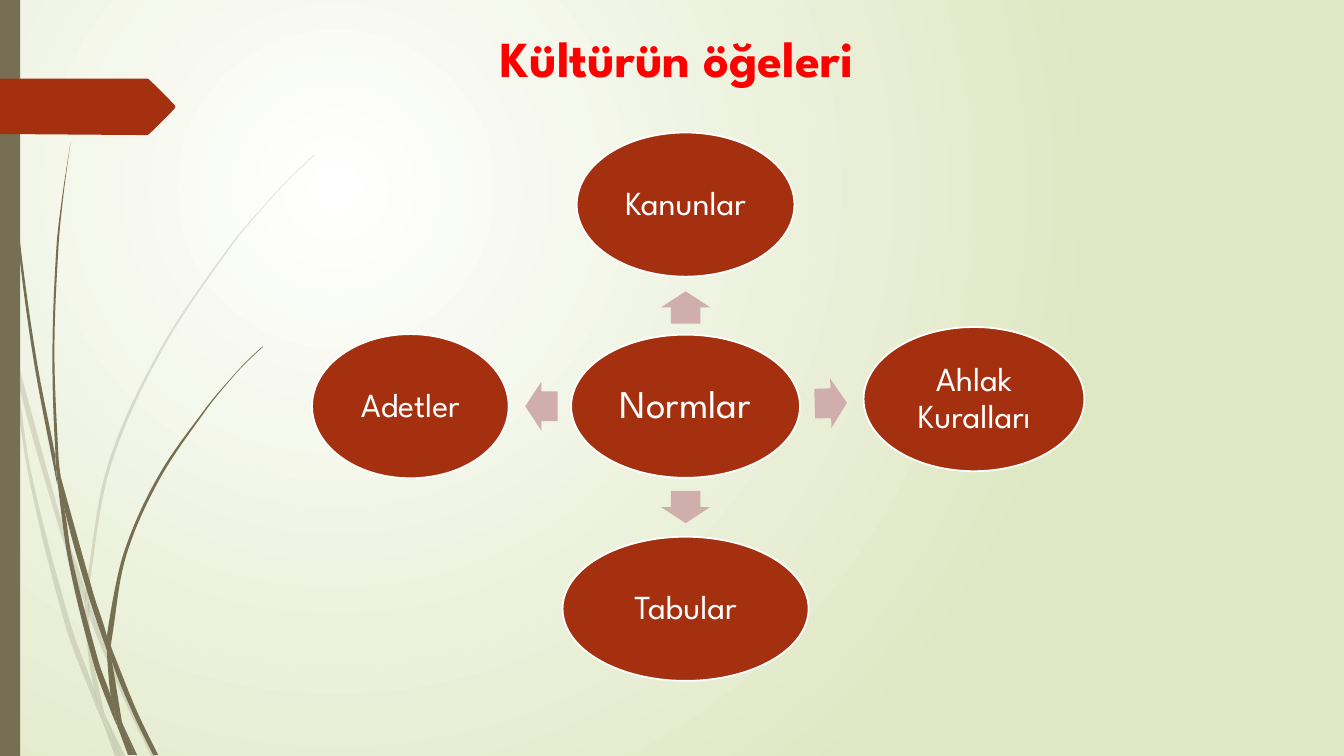
from dataclasses import dataclass
from math import dist

from lxml.etree import SubElement
from pptx import Presentation
from pptx.dml.color import RGBColor
from pptx.enum.shapes import MSO_SHAPE
from pptx.enum.text import MSO_ANCHOR, PP_ALIGN
from pptx.oxml.ns import qn
from pptx.util import Inches, Pt


@dataclass(frozen=True)
class Theme:
    """Colours, typeface and type sizes of the slide."""
    font: str = "League Spartan"
    title_size: int = 36
    hub_size: int = 28
    node_size: int = 24
    title: str = "FF0000"
    white: str = "FFFFFF"
    background: str = "DFE8C4"
    rust: str = "A53010"
    pink: str = "CFAEAB"
    olive: str = "766F54"


THEME = Theme()

FAINT_GRASS = [
    [(0.11, 3.5), (0.09, 3.22), (0, 2.82), (0, 2.99), (0.1, 3.44)],
    [(0.58, 5.22), (0.84, 5.99), (0.85, 5.86), (0.62, 5.2), (0.14, 3.45), (0.17, 3.76)],
    [(0.92, 6.07), (0.88, 5.96), (0.88, 6.1), (1.23, 6.94), (1.5, 7.5), (1.55, 7.5), (1.27, 6.92)],
    [(1.19, 7.5), (1.24, 7.5), (1.05, 7.11)],
    [(0.93, 6.83), (0.7, 6.19), (0.31, 4.69), (0.17, 3.76), (0.11, 3.5), (0.28, 4.7),
     (0.65, 6.21), (0.92, 6.93), (1.01, 7.14), (0.99, 7.07)],
    [(0.84, 5.99), (0.87, 6.46), (0.93, 6.83), (0.96, 6.92), (1.05, 7.11), (1.03, 7.06),
     (0.91, 6.46), (0.88, 6.1), (0.88, 6.08)],
    [(0.88, 5.84), (1.1, 4.62), (1.6, 3.49), (2.29, 2.45), (2.68, 1.98), (2.9, 1.75), (3.12, 1.54),
     (3.12, 1.53), (2.89, 1.75), (2.68, 1.97), (2.28, 2.44), (1.58, 3.48), (1.07, 4.61),
     (0.85, 5.84), (0.85, 5.86), (0.88, 5.96)],
    [(1.01, 7.14), (1.14, 7.5), (1.19, 7.5)],
    [(0.88, 6.08), (0.88, 6.1), (0.88, 5.96), (0.85, 5.86), (0.84, 5.99)],
    [(0.96, 6.92), (0.93, 6.83), (0.99, 7.07), (1.01, 7.14), (1.19, 7.5), (1.05, 7.11)],
]
DARK_GRASS = [
    [(0.07, 1.1), (0.17, 2.33), (0.33, 3.55), (0.56, 4.77), (0.57, 4.81), (0.55, 4.57), (0.55, 4.53),
     (0.36, 3.55), (0.19, 2.32), (0.08, 1.09), (0.05, 0.48), (0.04, 0), (0.03, 0), (0.04, 0.48)],
    [(0.88, 5.92), (1.06, 6.45), (1.06, 6.31), (0.93, 5.9), (0.6, 4.72), (0.64, 5.05)],
    [(1.13, 6.49), (1.1, 6.41), (1.11, 6.56), (1.32, 7.08), (1.52, 7.49), (1.57, 7.49), (1.36, 7.06)],
    [(1.1, 6.91), (0.98, 6.57), (0.72, 5.56), (0.64, 5.05), (0.57, 4.77), (0.68, 5.57),
     (0.93, 6.59), (1.11, 7.08), (1.17, 7.22), (1.16, 7.17)],
    [(0.6, 4.72), (0.58, 4.53), (0.54, 3.49), (0.58, 2.45), (0.63, 1.93), (0.7, 1.41),
     (0.62, 1.93), (0.56, 2.45), (0.52, 3.49), (0.55, 4.49)],
    [(1.33, 7.49), (1.36, 7.49), (1.22, 7.19)],
    [(0.57, 4.77), (0.64, 5.05), (0.6, 4.72), (0.55, 4.49), (0.55, 4.53)],
    [(1.11, 6.33), (1.25, 5.52), (1.58, 4.76), (2.05, 4.06), (2.31, 3.74), (2.45, 3.59), (2.61, 3.44),
     (2.6, 3.44), (2.45, 3.58), (2.31, 3.73), (2.04, 4.05), (1.56, 4.74), (1.22, 5.51),
     (1.06, 6.31), (1.1, 6.41)],
    [(1.17, 7.22), (1.27, 7.49), (1.31, 7.49)],
    [(1.06, 6.45), (1.1, 6.91), (1.16, 7.06), (1.22, 7.19), (1.21, 7.16), (1.11, 6.56), (1.09, 6.51)],
    [(1.06, 6.45), (1.09, 6.51), (1.11, 6.56), (1.1, 6.41), (1.06, 6.31)],
    [(1.16, 7.06), (1.1, 6.91), (1.16, 7.17), (1.17, 7.22), (1.3, 7.49), (1.33, 7.49), (1.22, 7.19)],
]
BANNER = [(1.73, 1.08), (1.48, 1.33), (1.46, 1.34), (1.36, 1.34), (0, 1.33), (0, 0.78),
          (1.36, 0.78), (1.46, 0.78), (1.48, 0.79), (1.73, 1.04), (1.74, 1.06)]

HUB = ("Normlar", 2.27, 1.42)
NODES = [
    ("Kanunlar", 2.16, (0, -2), (0, -0.98), 270),
    ("Ahlak Kuralları", 2.19, (2.86, -0.07), (1.44, -0.03), 358.5),
    ("Tabular", 2.44, (0, 2.01), (0, 1), 90),
    ("Adetler", 1.95, (-2.73, 0), (-1.43, 0), 180),
]


def write_text(shape, text, *, size, color, bold=False, anchor=MSO_ANCHOR.MIDDLE,
               inset=0.03, spacing=None):
    """Put one centred paragraph into a shape."""
    frame = shape.text_frame
    frame.word_wrap = True
    frame.vertical_anchor = anchor
    frame.margin_left = frame.margin_right = Inches(inset)
    frame.margin_top = frame.margin_bottom = Inches(inset)
    paragraph = frame.paragraphs[0]
    paragraph.alignment = PP_ALIGN.CENTER
    paragraph.line_spacing = spacing
    run = paragraph.add_run()
    run.text = text
    run.font.name = THEME.font
    run.font.size = Pt(size)
    run.font.bold = bold
    run.font.color.rgb = RGBColor.from_string(color)


def paint(shape, color, outline=None, opacity=None):
    """Give a shape a flat fill, and an outline when one is named."""
    shape.shadow.inherit = False
    shape.fill.solid()
    shape.fill.fore_color.rgb = RGBColor.from_string(color)
    if outline:
        shape.line.color.rgb = RGBColor.from_string(outline)
        shape.line.width = Pt(1.25)
    else:
        shape.line.fill.background()
    if opacity:
        fill_color = next(shape.element.spPr.iter(qn("a:srgbClr")))
        SubElement(fill_color, qn("a:alpha"), val=str(opacity * 1000))


def add_centred(slide, kind, centre, width, height):
    """Add a preset shape around a centre point given in inches."""
    x, y = centre
    return slide.shapes.add_shape(kind, Inches(x - width / 2), Inches(y - height / 2),
                                  Inches(width), Inches(height))


def tangent(before, point, after):
    """Return the unit direction through a point, or none at a sharp corner."""
    arriving, leaving = dist(before, point), dist(point, after)
    turn = sum((p - b) * (a - p) for b, p, a in zip(before, point, after))
    if turn < 0.9 * arriving * leaving:
        return 0, 0
    return tuple((a - b) / dist(before, after) for b, a in zip(before, after))


def add_outline(slide, origin, points, color, opacity=None):
    """Draw a closed outline that bends smoothly between its sharp corners."""
    corners = [(Inches(origin[0] + x), Inches(origin[1] + y)) for x, y in points]
    builder = slide.shapes.build_freeform(*corners[0])
    builder.add_line_segments(corners[1:] + corners[:1], close=True)
    shape = builder.convert_to_shape()
    tangents = [tangent(corners[i - 1], corner, corners[(i + 1) % len(corners)])
                for i, corner in enumerate(corners)]
    for index, segment in enumerate(list(shape.element.iter(qn("a:lnTo")))):
        following = (index + 1) % len(corners)
        start, end = corners[index], corners[following]
        reach = dist(start, end) / 3
        controls = [[s + reach * t for s, t in zip(start, tangents[index])],
                    [e - reach * t for e, t in zip(end, tangents[following])], end]
        segment.tag = qn("a:cubicBezTo")
        segment.remove(segment[0])
        for x, y in controls:
            SubElement(segment, qn("a:pt"), x=str(round(x - shape.left)),
                       y=str(round(y - shape.top)))
    paint(shape, color, opacity=opacity)


def add_background(slide):
    """Fill the slide with a radial gradient lit from the upper left."""
    fill = slide.background.fill
    fill.gradient()
    for stop, color in zip(fill.gradient_stops, (THEME.white, THEME.background)):
        stop.color.rgb = RGBColor.from_string(color)
    linear = next(slide.element.iter(qn("a:lin")))
    gradient = linear.getparent()
    gradient.remove(linear)
    circle = SubElement(gradient, qn("a:path"), path="circle")
    SubElement(circle, qn("a:fillToRect"), l="50000", t="50000", r="100000", b="100000")


def add_decoration(slide, box):
    """Draw the grass, the side bar and the pointed banner."""
    left, top, width, height = box
    for blades, opacity in ((FAINT_GRASS, 20), (DARK_GRASS, None)):
        for points in blades:
            add_outline(slide, (left, top), points, THEME.olive, opacity)
    bar = slide.shapes.add_shape(MSO_SHAPE.RECTANGLE, *map(Inches, (left, top, width, height)))
    paint(bar, THEME.olive)
    add_outline(slide, (left, top), BANNER, THEME.rust)


def add_title(slide, box, text):
    """Place the slide title."""
    title = slide.shapes.add_textbox(*map(Inches, box))
    write_text(title, text, size=THEME.title_size, color=THEME.title, bold=True,
               anchor=MSO_ANCHOR.TOP, inset=0.05)


def add_oval(slide, text, centre, width, height, size):
    """Add a labelled oval of the diagram."""
    oval = add_centred(slide, MSO_SHAPE.OVAL, centre, width, height)
    paint(oval, THEME.rust, outline=THEME.white)
    write_text(oval, text, size=size, color=THEME.white, spacing=0.9)


def add_radial_diagram(slide, box):
    """Draw the hub with an arrow to each surrounding node."""
    left, top, _, height = box
    hub_x, hub_y = left + 3.71, top + height / 2
    name, width, oval_height = HUB
    add_oval(slide, name, (hub_x, hub_y), width, oval_height, THEME.hub_size)
    for text, width, node_shift, arrow_shift, rotation in NODES:
        arrow_centre = hub_x + arrow_shift[0], hub_y + arrow_shift[1]
        arrow = add_centred(slide, MSO_SHAPE.RIGHT_ARROW, arrow_centre, 0.32, 0.49)
        arrow.adjustments[0] = 0.6
        arrow.rotation = rotation
        paint(arrow, THEME.pink)
        node_centre = hub_x + node_shift[0], hub_y + node_shift[1]
        add_oval(slide, text, node_centre, width, 1.43, THEME.node_size)


def main():
    """Build and save the presentation."""
    presentation = Presentation()
    presentation.slide_width, presentation.slide_height = Inches(13.33), Inches(7.5)
    slide = presentation.slides.add_slide(presentation.slide_layouts[6])
    add_background(slide)
    add_decoration(slide, (0, 0, 0.2, 7.5))
    add_title(slide, (1.84, 0.22, 9.75, 0.95), "Kültürün öğeleri")
    add_radial_diagram(slide, (3.09, 1.31, 7.66, 5.44))
    presentation.save("out.pptx")


if __name__ == "__main__":
    main()
